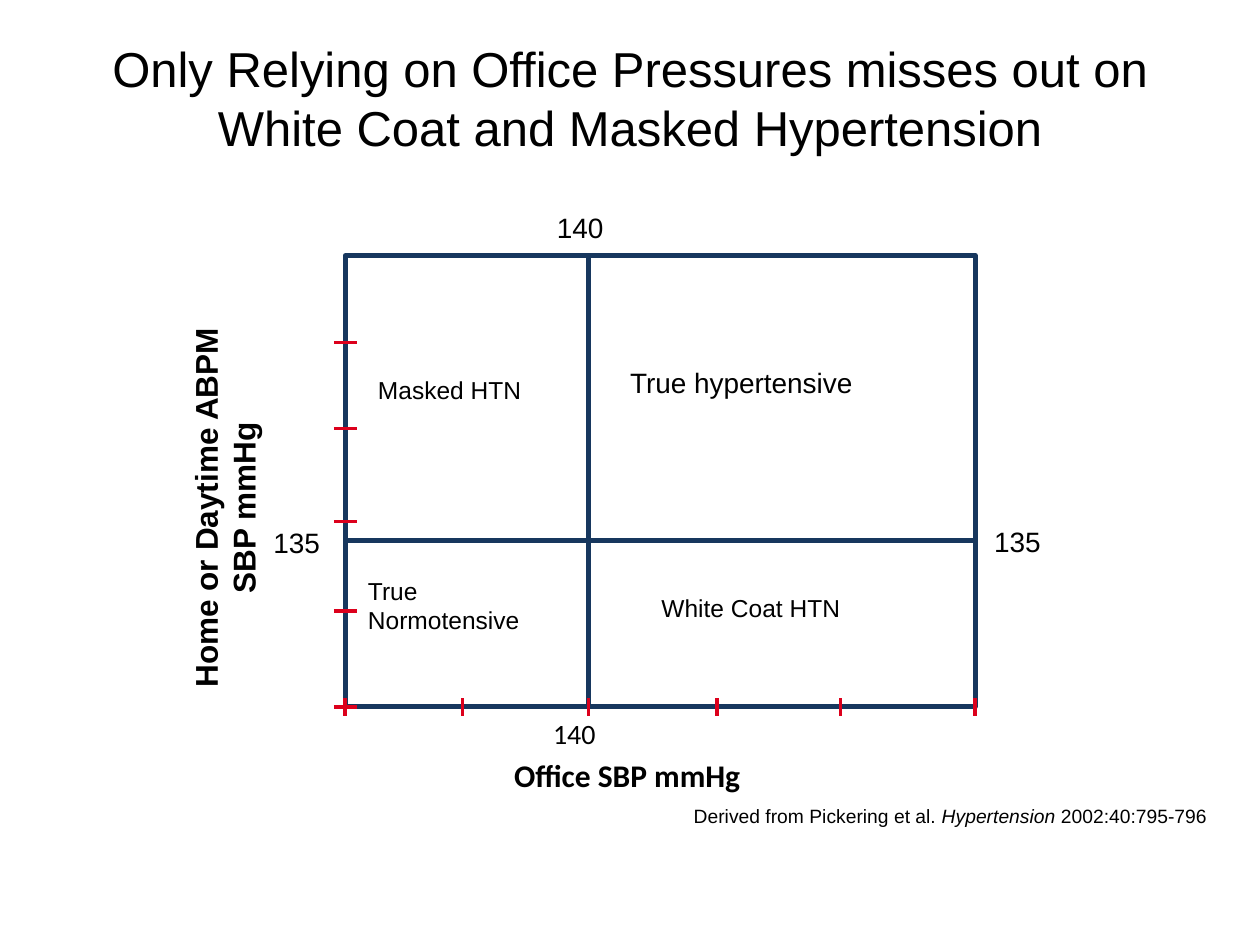
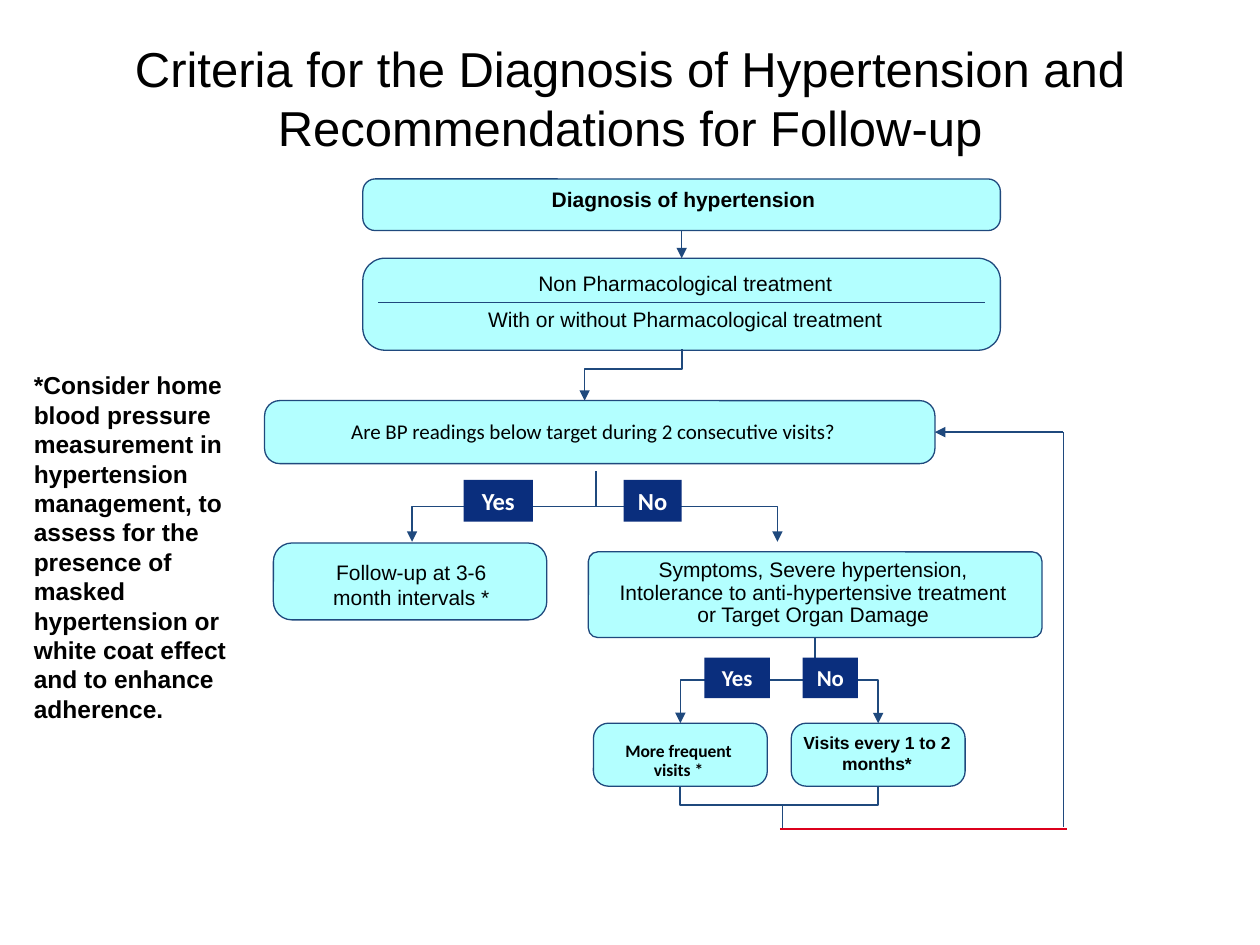
import dataclasses

import pptx
import pptx.dml.color
import pptx.enum.shapes
import pptx.enum.text
import pptx.oxml.ns
import pptx.oxml.xmlchemy
import pptx.util
from lxml import etree

Inches = pptx.util.Inches
Pt = pptx.util.Pt
qn = pptx.oxml.ns.qn
SHAPE = pptx.enum.shapes.MSO_SHAPE
CONNECTOR = pptx.enum.shapes.MSO_CONNECTOR
LEFT = pptx.enum.text.PP_ALIGN.LEFT
CENTER = pptx.enum.text.PP_ALIGN.CENTER
RIGHT = pptx.enum.text.PP_ALIGN.RIGHT
TOP = pptx.enum.text.MSO_ANCHOR.TOP
MIDDLE = pptx.enum.text.MSO_ANCHOR.MIDDLE


@dataclasses.dataclass(frozen=True)
class Theme:
    text: str = "000000"
    light_text: str = "FFFFFF"
    frame: str = "17375E"
    flow: str = "1F497D"
    accent: str = "DC001C"
    box: str = "B3FFFF"
    answer: str = "0A2E7D"
    main_font: str = "Arial"
    second_font: str = "Calibri"
    title_size: int = 28
    axis_size: int = 18
    value_size: int = 16
    label_size: int = 14
    answer_size: int = 13
    flow_size: int = 12
    source_size: int = 11
    visit_size: int = 10


THEME = Theme()

# Quadrant chart
QUADRANT_TITLE = "Only Relying on Office Pressures misses out on White Coat and Masked Hypertension"
FRAME = (2.74, 2.03, 5, 3.58)
OFFICE_LIMIT, HOME_LIMIT = 4.67, 4.29
OFFICE_TICKS = [2.74, 3.67, 4.67, 5.69, 6.67, 7.74]
HOME_TICKS = [2.72, 3.4, 4.14, 4.85, 5.61]
HALF_TICK_ACROSS, HALF_TICK_UP = 0.09, 0.07
VALUE = {"size": THEME.value_size}
LABEL = {"size": THEME.label_size}
AXIS = {"size": THEME.axis_size, "bold": True}
CALIBRI = {"font": THEME.second_font}
QUADRANT_TEXTS = [
    ((4.08, 6, 2.16, 0.3), ["Office SBP mmHg"], {**AXIS, **CALIBRI}),
    ((0.35, 3.73, 2.86, 0.6), ["Home or Daytime ABPM", "SBP mmHg"],
     {**AXIS, "align": CENTER, "rotation": 270}),
    ((5, 2.9, 2.58, 0.27), ["True hypertensive"], {**VALUE, "wrap": True}),
    ((2.92, 4.57, 1.75, 0.47), ["True", "Normotensive"], {**LABEL, "wrap": True}),
    ((5.25, 4.71, 1.43, 0.24), ["White Coat HTN"], LABEL),
    ((3, 2.98, 1.14, 0.24), ["Masked HTN"], LABEL),
    ((2.17, 4.17, 0.37, 0.27), ["135"], VALUE),
    ((7.89, 4.16, 0.37, 0.27), ["135"], VALUE),
    ((4.42, 1.67, 0.37, 0.27), ["140"], VALUE),
    ((4.39, 5.69, 0.37, 0.27), ["140"], {**VALUE, **CALIBRI}),
    ((5.4, 6.38, 4.18, 0.18),
     [[("Derived from Pickering et al. ", False), ("Hypertension", True),
       (" 2002:40:795-796", False)]],
     {"size": THEME.source_size, "align": RIGHT}),
]

# Flow chart
FLOW_TITLE = "Criteria for the Diagnosis of Hypertension and Recommendations for Follow-up"
NOTE = ("*Consider home blood pressure measurement in hypertension management, to assess "
        "for the presence of masked hypertension or white coat effect and to enhance adherence.")
ROUNDING = 0.24
STEP = {"size": THEME.flow_size}
VISIT = {"size": THEME.visit_size, "bold": True}
# name: (box, corner rounding, text area, paragraphs, style)
FLOW_BOXES = {
    "diagnosis": ((2.88, 1.42, 5.06, 0.41), ROUNDING, (2.95, 1.44, 4.95, 0.28),
                  ["Diagnosis of hypertension"], {**STEP, "bold": True}),
    "treatment": ((2.88, 2.05, 5.06, 0.73), ROUNDING, (3.02, 2.09, 4.84, 0.6),
                  ["Non Pharmacological treatment", "With or without Pharmacological treatment"],
                  {**STEP, "space_before": 6}),
    "question": ((2.1, 3.18, 5.32, 0.5), ROUNDING, (2.59, 3.32, 4.24, 0.2),
                 ["Are BP readings below target during 2 consecutive visits?"],
                 {**STEP, **CALIBRI, "inset": False, "wrap": False}),
    "follow-up": ((2.17, 4.31, 2.17, 0.61), ROUNDING, (2.39, 4.39, 1.75, 0.5),
                  ["Follow-up at 3-6 month intervals *"], STEP),
    "symptoms": ((4.67, 4.38, 3.6, 0.68), 0.11, (4.81, 4.39, 3.29, 0.64),
                 ["Symptoms, Severe hypertension, Intolerance to anti-hypertensive treatment "
                  "or Target Organ Damage"], {**STEP, "line_spacing": 0.9}),
    "frequent": ((4.71, 5.74, 1.38, 0.5), ROUNDING, (4.82, 5.84, 1.13, 0.4),
                 ["More frequent\nvisits *"],
                 {**VISIT, **CALIBRI, "line_spacing": 0.9, "wrap": False}),
    "monthly": ((6.28, 5.74, 1.38, 0.5), ROUNDING, (6.26, 5.76, 1.4, 0.43),
                ["Visits every 1 to 2 months*"], VISIT),
}
# start, end, share of the drop before the bend
BRANCHES = [
    ((5.41, 2.77), (4.64, 3.18), 0.39),
    ((4.73, 3.74), (6.17, 4.3), 0.5),
    ((4.73, 3.74), (3.27, 4.3), 0.5),
    ((6.47, 5.06), (5.4, 5.74), 0.5),
    ((6.47, 5.06), (6.97, 5.74), 0.5),
]
MERGES = [((5.4, 6.16), (6.17, 6.39)), ((6.97, 6.16), (6.17, 6.39))]
ANSWERS = [
    ((3.68, 3.81, 0.55, 0.33), "Yes", THEME.label_size),
    ((4.95, 3.81, 0.46, 0.33), "No", THEME.label_size),
    ((5.59, 5.22, 0.52, 0.32), "Yes", THEME.answer_size),
    ((6.37, 5.22, 0.44, 0.32), "No", THEME.answer_size),
]
RETURN_X, RETURN_Y = 8.44, 3.43


def rgb(color):
    return pptx.dml.color.RGBColor.from_string(color)


def inches(values):
    return [Inches(value) for value in values]


def write(shape, paragraphs, size, font=THEME.main_font, color=THEME.text, bold=False,
          align=LEFT, anchor=TOP, wrap=True, inset=True, line_spacing=None, space_before=0):
    """Fill a shape; a paragraph is a string or a list of (text, italic) runs."""
    frame = shape.text_frame
    frame.word_wrap = wrap
    frame.vertical_anchor = anchor
    if not inset:
        frame.margin_left = frame.margin_top = frame.margin_right = frame.margin_bottom = 0
    for index, content in enumerate(paragraphs):
        paragraph = frame.add_paragraph() if index else frame.paragraphs[0]
        paragraph.alignment = align
        if line_spacing:
            paragraph.line_spacing = line_spacing
        if index and space_before:
            paragraph.space_before = Pt(space_before)
        runs = [(content, False)] if isinstance(content, str) else content
        for text, italic in runs:
            for line_number, line in enumerate(text.split("\n")):
                if line_number:
                    paragraph.add_line_break()
                run = paragraph.add_run()
                run.text = line
                run.font.name = font
                run.font.size = Pt(size)
                run.font.bold = bold
                run.font.italic = italic
                run.font.color.rgb = rgb(color)


def add_text(slide, place, paragraphs, rotation=0, **style):
    shape = slide.shapes.add_textbox(*inches(place))
    shape.rotation = rotation
    write(shape, paragraphs, **style)


def add_box(slide, kind, place, fill=None, line=None, width=0.75):
    shape = slide.shapes.add_shape(kind, *inches(place))
    shape.shadow.inherit = False
    if fill:
        shape.fill.solid()
        shape.fill.fore_color.rgb = rgb(fill)
    else:
        shape.fill.background()
    if line:
        shape.line.color.rgb = rgb(line)
        shape.line.width = Pt(width)
    else:
        shape.line.fill.background()
    return shape


def add_line(slide, start, end, color=THEME.flow, width=1, arrow=False, kind=CONNECTOR.STRAIGHT):
    connector = slide.shapes.add_connector(kind, *inches((*start, *end)))
    connector.line.color.rgb = rgb(color)
    connector.line.width = Pt(width)
    properties = connector.element.spPr
    if arrow:
        etree.SubElement(properties.find(qn("a:ln")), qn("a:tailEnd"), type="triangle")
    etree.SubElement(properties, qn("a:effectLst"))
    return connector


def add_elbow(slide, start, end, bend=None, arrow=False):
    """Go down first, then sideways; with a bend, finish going down."""
    (start_x, start_y), (end_x, end_y) = start, end
    center_x, center_y = (start_x + end_x) / 2, (start_y + end_y) / 2
    half_drop, half_run = (end_y - start_y) / 2, abs(end_x - start_x) / 2
    connector = add_line(slide, (center_x - half_drop, center_y - half_run),
                         (center_x + half_drop, center_y + half_run),
                         arrow=arrow, kind=CONNECTOR.ELBOW)
    properties = connector.element.spPr
    transform = properties.find(qn("a:xfrm"))
    goes_right = end_x > start_x
    transform.set("rot", str((270 if goes_right else 90) * 60000))
    if goes_right:
        transform.set("flipH", "1")
    geometry = properties.find(qn("a:prstGeom"))
    if bend is None:
        geometry.set("prst", "bentConnector2")
    else:
        etree.SubElement(geometry.find(qn("a:avLst")), qn("a:gd"),
                         name="adj1", fmla=f"val {round(bend * 100000)}")


def add_slide(presentation, title):
    slide = presentation.slides.add_slide(presentation.slide_layouts[6])
    add_text(slide, (0.5, 0.3, 9, 0.95), [title], size=THEME.title_size,
             align=CENTER, anchor=MIDDLE)
    return slide


def build_quadrants(presentation):
    slide = add_slide(presentation, QUADRANT_TITLE)
    left, top, width, height = FRAME
    right, bottom = left + width, top + height
    add_box(slide, SHAPE.RECTANGLE, FRAME, line=THEME.frame, width=3)
    add_line(slide, (OFFICE_LIMIT, top), (OFFICE_LIMIT, bottom), THEME.frame, 3)
    for y in HOME_TICKS:
        add_line(slide, (left - HALF_TICK_ACROSS, y), (left + HALF_TICK_ACROSS, y),
                 THEME.accent, 2)
    for x in OFFICE_TICKS:
        add_line(slide, (x, bottom - HALF_TICK_UP), (x, bottom + HALF_TICK_UP),
                 THEME.accent, 2)
    add_line(slide, (left, HOME_LIMIT), (right, HOME_LIMIT), THEME.frame, 3)
    for place, paragraphs, style in QUADRANT_TEXTS:
        add_text(slide, place, paragraphs, **{"wrap": False, "inset": False, **style})


def build_flow(presentation):
    slide = add_slide(presentation, FLOW_TITLE)
    add_text(slide, (0.17, 2.89, 2, 2.93), [NOTE], size=THEME.label_size, bold=True)
    for start, end in MERGES:
        add_elbow(slide, start, end)

    boxes = {}
    for name, (place, rounding, text_place, paragraphs, style) in FLOW_BOXES.items():
        boxes[name] = add_box(slide, SHAPE.ROUNDED_RECTANGLE, place, THEME.box, THEME.flow)
        boxes[name].adjustments[0] = rounding
        anchor = TOP if style.get("inset") is False else MIDDLE
        add_text(slide, text_place, paragraphs, align=CENTER, anchor=anchor, **style)

    for start, end, bend in BRANCHES:
        add_elbow(slide, start, end, bend, arrow=True)
    for place, answer, size in ANSWERS:
        label = add_box(slide, SHAPE.RECTANGLE, place, THEME.answer)
        write(label, [answer], size, THEME.second_font, THEME.light_text, bold=True,
              align=CENTER, anchor=MIDDLE, wrap=False)

    first_step = add_line(slide, (5.41, 1.83), (5.41, 2.05), width=0.5, arrow=True)
    first_step.begin_connect(boxes["diagnosis"], 2)
    first_step.end_connect(boxes["treatment"], 0)
    add_line(slide, (3, 2.4), (7.82, 2.4))

    add_line(slide, (6.21, 6.39), (6.21, 6.58))
    add_line(slide, (6.19, 6.58), (8.47, 6.58), THEME.accent)
    add_line(slide, (RETURN_X, 6.56), (RETURN_X, RETURN_Y))
    return_arrow = add_line(slide, (RETURN_X, RETURN_Y), (7.42, RETURN_Y), arrow=True)
    return_arrow.end_connect(boxes["question"], 3)


def main():
    presentation = pptx.Presentation()
    presentation.slide_width, presentation.slide_height = Inches(10), Inches(7.5)
    build_quadrants(presentation)
    build_flow(presentation)
    presentation.save("out.pptx")


if __name__ == "__main__":
    main()
